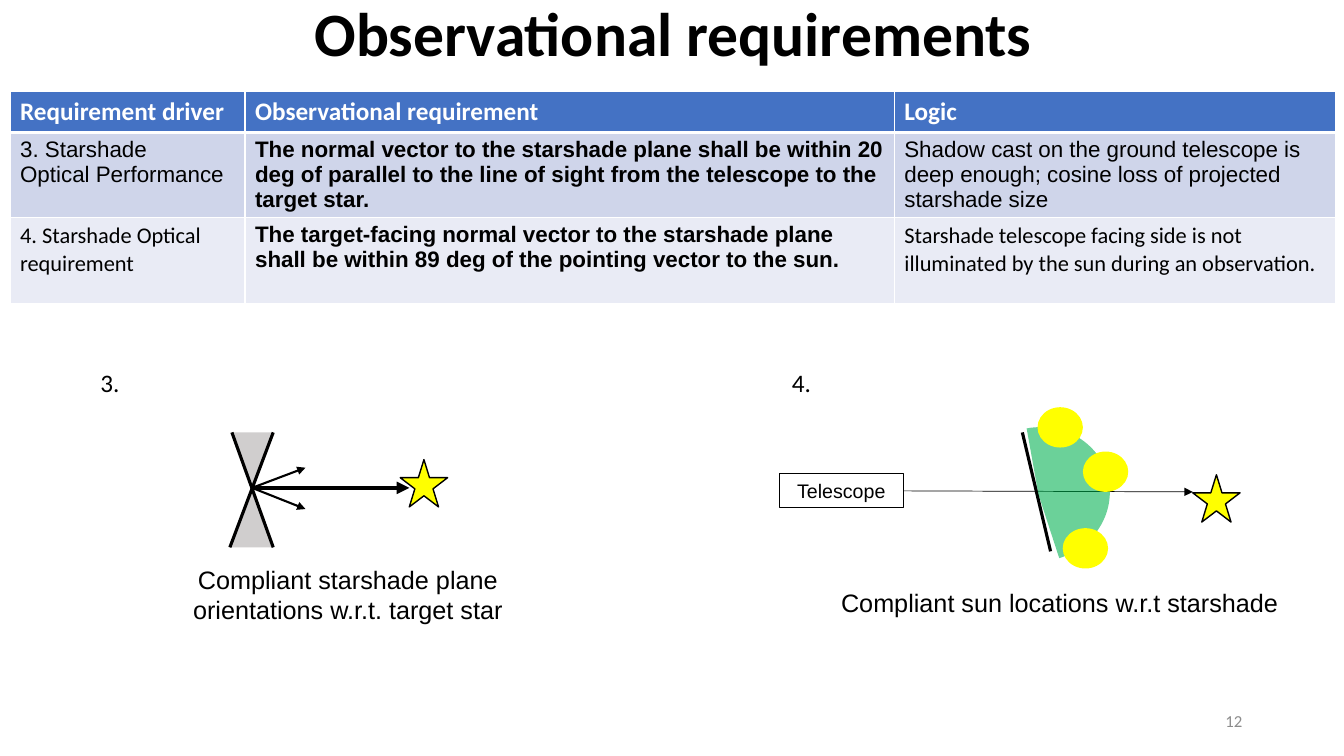
from lxml import etree
from pptx import Presentation
from pptx import util as u
from pptx.dml.color import RGBColor
from pptx.enum import shapes, text
from pptx.oxml.ns import qn

COLORS = {
    "black": "000000", "white": "FFFFFF", "header": "4472C4",
    "band_dark": "CFD5EA", "band_light": "E9EBF5", "gray": "D0CECE",
    "yellow": "FFFF00", "green": "00B050", "number": "8C8C8C",
}
SHAPE = shapes.MSO_SHAPE
ALIGN = text.PP_ALIGN
ANCHOR = text.MSO_ANCHOR


def rgb(name):
    return RGBColor.from_string(COLORS[name])


class Deck:
    def __init__(self, width, height):
        self.prs = Presentation()
        self.prs.slide_width, self.prs.slide_height = u.Inches(width), u.Inches(height)
        self.s = self.prs.slides.add_slide(self.prs.slide_layouts[5])

    def set_text(self, tf, words, size, font="Arial", color="black", bold=False, align=None):
        tf.word_wrap = True
        tf.text = words
        for p in tf.paragraphs:
            p.alignment = align
            p.font.size, p.font.name, p.font.bold = u.Pt(size), font, bold
            p.font.color.rgb = rgb(color)

    def title(self, words, *box):
        sp = self.s.shapes.title
        sp.left, sp.top, sp.width, sp.height = map(u.Inches, box)
        tf = sp.text_frame
        self.set_text(tf, words, 44, "Calibri", bold=True, align=ALIGN.CENTER)
        tf.vertical_anchor = ANCHOR.MIDDLE
        tf.paragraphs[0].line_spacing = 0.9

    def label(self, words, *box, size=18, font="Arial", color="black",
              align=ALIGN.CENTER, anchor=ANCHOR.TOP):
        tf = self.s.shapes.add_textbox(*map(u.Inches, box)).text_frame
        self.set_text(tf, words, size, font, color, align=align)
        tf.vertical_anchor = anchor

    def shape(self, kind, *box, fill=None, line=None, rotation=0):
        sp = self.s.shapes.add_shape(kind, *map(u.Inches, box))
        sp.shadow.inherit = False
        sp.rotation = rotation
        if fill:
            sp.fill.solid()
            sp.fill.fore_color.rgb = rgb(fill)
        else:
            sp.fill.background()
        if line:
            sp.line.color.rgb, sp.line.width = rgb("black"), u.Pt(line)
        else:
            sp.line.fill.background()
        return sp

    def pie(self, *box, start, end, fill, opacity, rotation):
        """Draw a translucent sector clockwise from start to end, in degrees."""
        sp = self.shape(SHAPE.PIE, *box, fill=fill, rotation=rotation)
        for i, angle in enumerate((start, end)):
            sp.adjustments[i] = angle * 0.6  # 60000 units a degree, over 100000
        color = sp._element.spPr.find(qn("a:solidFill")).find(qn("a:srgbClr"))
        etree.SubElement(color, qn("a:alpha"), val=str(opacity * 1000))

    def line(self, x1, y1, x2, y2, width, arrow=False):
        cx = self.s.shapes.add_connector(
            shapes.MSO_CONNECTOR.STRAIGHT, *map(u.Inches, (x1, y1, x2, y2)))
        cx.line.color.rgb, cx.line.width = rgb("black"), u.Pt(width)
        sp_pr = cx._element.spPr
        if arrow:
            etree.SubElement(sp_pr.find(qn("a:ln")), qn("a:tailEnd"), type="triangle")
        etree.SubElement(sp_pr, qn("a:effectLst"))

    def border(self, cell, row):
        """Give a cell white edges, thicker between the header and the body."""
        tc_pr = cell._tc.get_or_add_tcPr()
        thick = {0: "lnB", 1: "lnT"}.get(row)
        for side in ("lnL", "lnR", "lnT", "lnB"):
            width = u.Pt(3 if side == thick else 1)
            ln = etree.SubElement(tc_pr, qn("a:" + side), w=str(int(width)))
            fill = etree.SubElement(ln, qn("a:solidFill"))
            etree.SubElement(fill, qn("a:srgbClr"), val=COLORS["white"])

    def table(self, left, top, widths, heights, rows, fills, fonts):
        box = map(u.Inches, (left, top, sum(widths), sum(heights)))
        tbl = self.s.shapes.add_table(len(rows), len(widths), *box).table
        for column, width in zip(tbl.columns, widths):
            column.width = u.Inches(width)
        for i, row in enumerate(rows):
            tbl.rows[i].height = u.Inches(heights[i])
            for j, words in enumerate(row):
                cell = tbl.cell(i, j)
                self.border(cell, i)
                cell.fill.solid()
                cell.fill.fore_color.rgb = rgb(fills[i])
                self.set_text(cell.text_frame, words, 16 if i else 18, fonts[i][j],
                              "black" if i else "white", bold=i == 0 or j == 1)


def requirements_table(deck):
    rows = [
        ("Requirement driver", "Observational requirement", "Logic"),
        ("3. Starshade\nOptical Performance",
         "The normal vector to the starshade plane shall be within 20 deg of parallel "
         "to the line of sight from the telescope to the target star.",
         "Shadow cast on the ground telescope is deep enough; cosine loss of projected "
         "starshade size"),
        ("4. Starshade Optical requirement",
         "The target-facing normal vector to the starshade plane shall be within 89 deg "
         "of the pointing vector to the sun.",
         "Starshade telescope facing side is not illuminated by the sun during an "
         "observation."),
    ]
    fonts = [("Calibri",) * 3, ("Arial",) * 3, ("Calibri", "Arial", "Calibri")]
    deck.table(0.1, 0.91, (2.33, 6.44, 4.38), (0.4, 0.84, 0.86), rows,
               ("header", "band_dark", "band_light"), fonts)


def star(deck, left, top):
    deck.shape(SHAPE.STAR_5_POINT, left, top, 0.47, 0.47, fill="yellow", line=1)


def orientation_diagram(deck):
    deck.label("3.", 0.67, 3.59, 0.84, 0.4, font="Calibri")
    deck.shape(SHAPE.ISOSCELES_TRIANGLE, 2.3, 4.29, 0.41, 0.55, fill="gray", rotation=180)
    deck.shape(SHAPE.ISOSCELES_TRIANGLE, 2.28, 4.86, 0.44, 0.57, fill="gray")
    star(deck, 3.97, 4.56)
    deck.line(2.52, 4.84, 4.06, 4.84, 3, arrow=True)
    deck.line(2.71, 4.29, 2.28, 5.43, 2.25)
    deck.line(2.3, 4.29, 2.71, 5.43, 2.25)
    for tip in (4.64, 5.05):
        deck.line(2.5, 4.84, 3.03, tip, 1.5, arrow=True)
    deck.label("Compliant starshade plane orientations w.r.t. target star",
               1.51, 5.55, 3.88, 0.71)


def sun_diagram(deck):
    deck.label("4.", 7.53, 3.59, 0.84, 0.4, font="Calibri")
    deck.line(8.96, 4.87, 11.83, 4.88, 0.5, arrow=True)
    deck.line(10.14, 4.29, 10.42, 5.47, 2.25)
    deck.pie(9.59, 4.24, 1.42, 1.33, start=273.35, end=85.46,
             fill="green", opacity=58, rotation=346.5)
    for left, top in ((10.29, 4.04), (10.74, 4.48), (10.54, 5.24)):
        deck.shape(SHAPE.OVAL, left, top, 0.45, 0.4, fill="yellow")
    star(deck, 11.83, 4.71)
    telescope = deck.shape(SHAPE.RECTANGLE, 7.73, 4.7, 1.23, 0.34, line=0.75)
    deck.set_text(telescope.text_frame, "Telescope", 14, align=ALIGN.CENTER)
    deck.label("Compliant sun locations w.r.t starshade", 8.13, 5.78, 4.76, 0.4)


def main():
    deck = Deck(13.33, 7.5)
    deck.title("Observational requirements", 0.93, -0.36, 11.5, 1.45)
    requirements_table(deck)
    orientation_diagram(deck)
    sun_diagram(deck)
    deck.label("12", 9.42, 6.95, 3, 0.4, size=12, font="Calibri", color="number",
               align=ALIGN.RIGHT, anchor=ANCHOR.MIDDLE)
    deck.prs.save("out.pptx")


if __name__ == "__main__":
    main()
